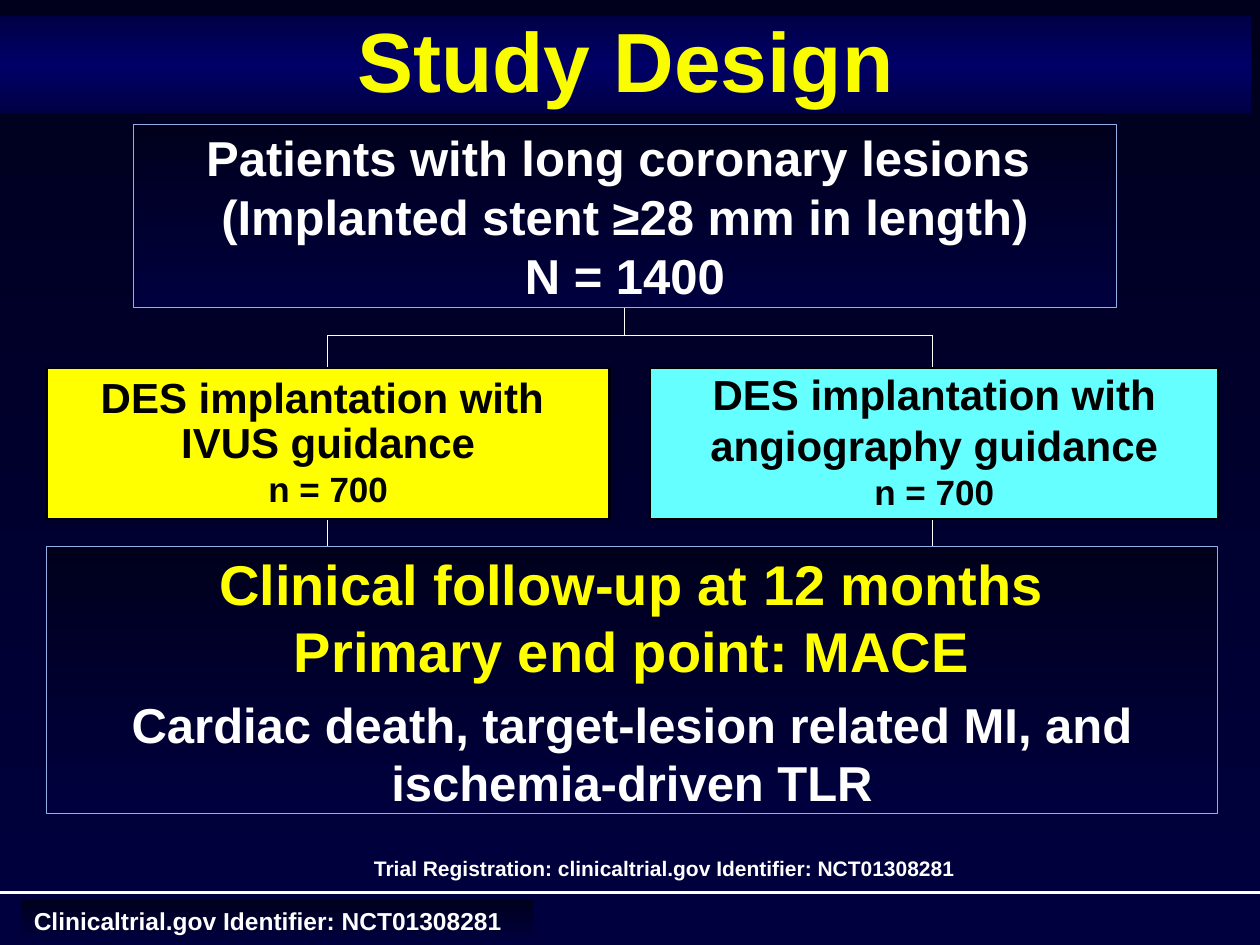
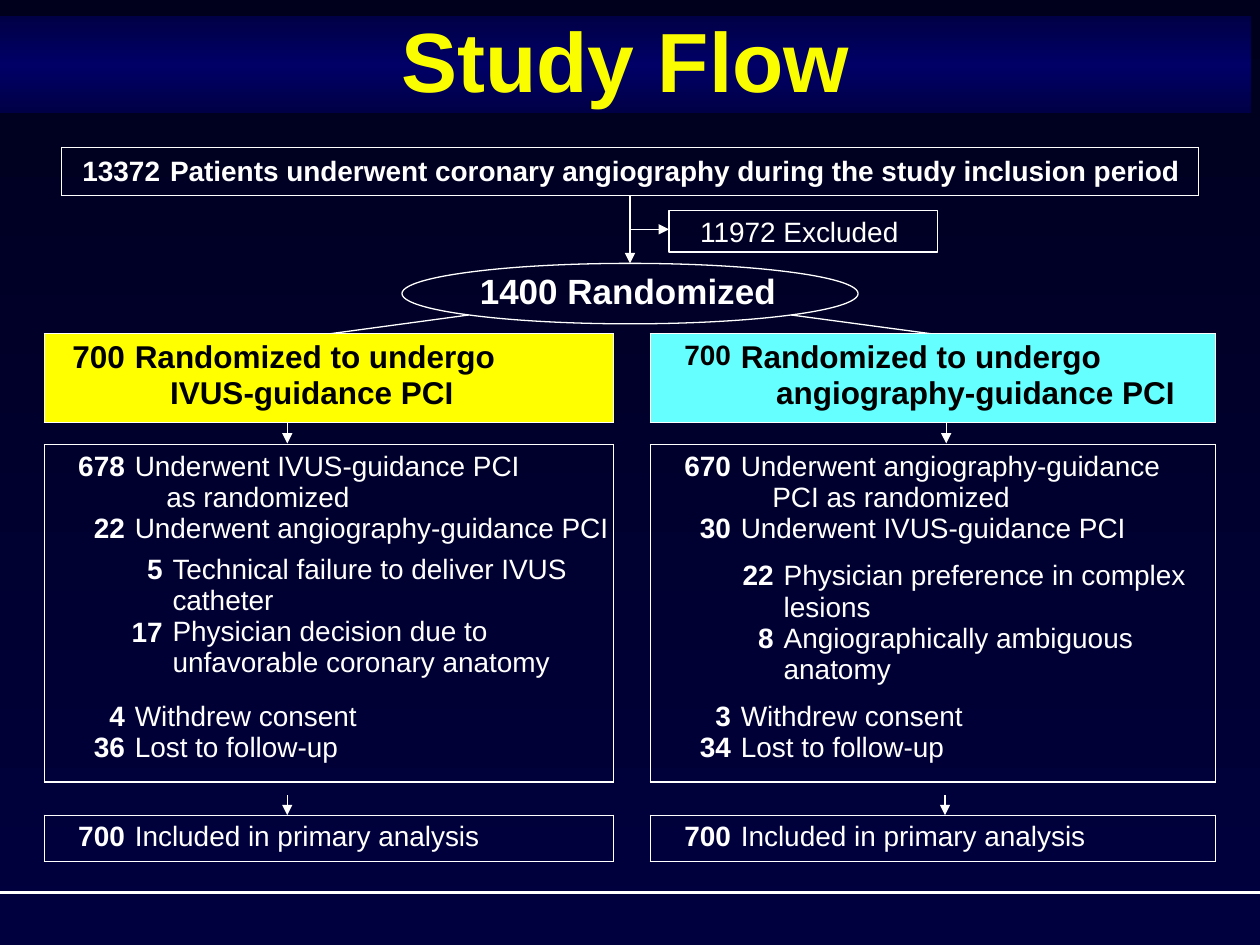
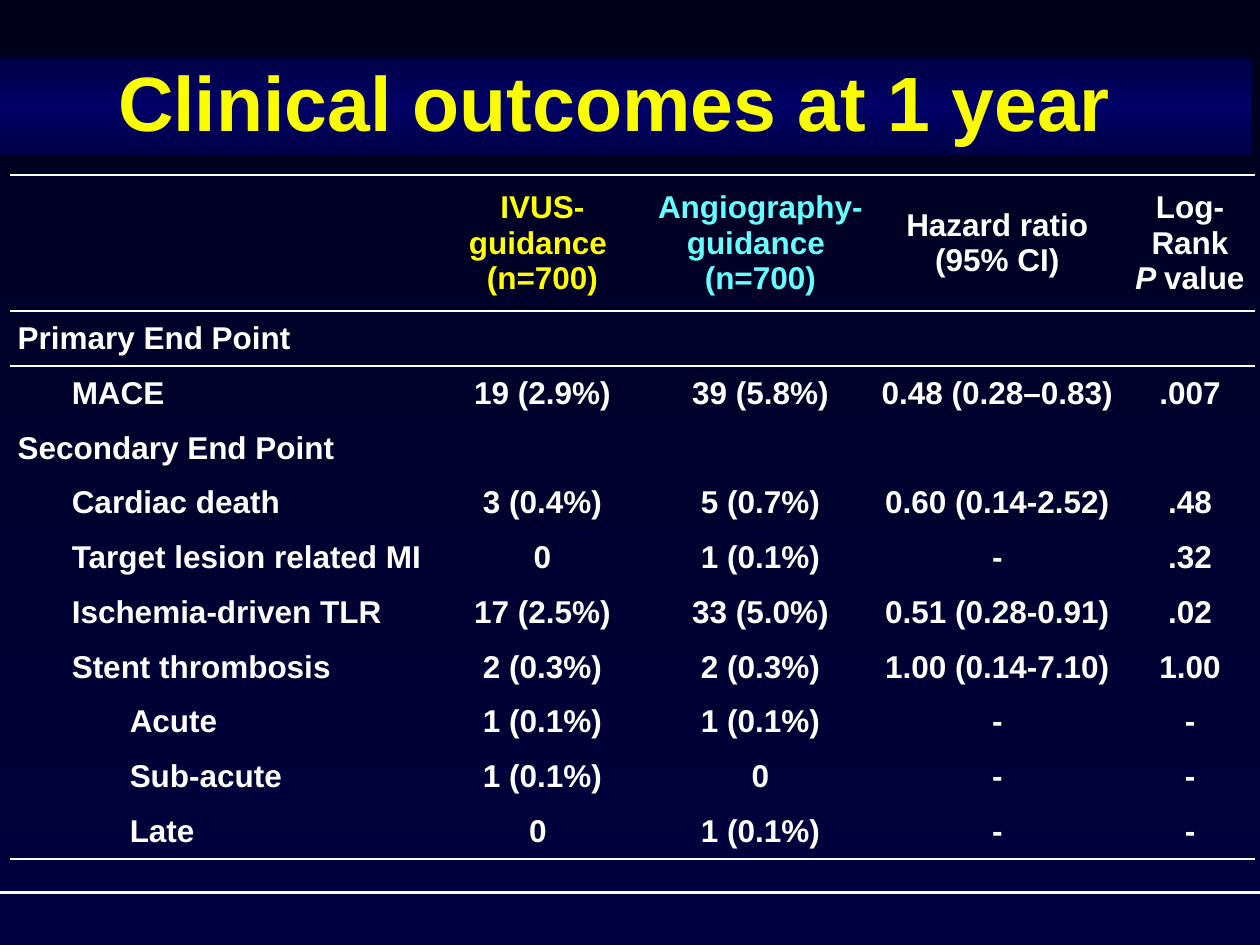
from copy import deepcopy

from lxml import etree
from pptx import Presentation
from pptx.dml.color import RGBColor
from pptx.enum import shapes, text
from pptx.oxml.ns import qn
from pptx.util import Inches, Pt

# ---- Shared look ----
WIDTH, HEIGHT = 10, 7.5
FONT = "Arial"
COLORS = dict(white="FFFFFF", black="000000", title="FAFD00", yellow="FFFF00",
              cyan="66FFFF", edge="92AFE6")
NIGHT = ["00001D", "00003E"]
BAND = ["000047", "000066", "000047"]
NO_GRID = "{2D5ABB26-0587-4C30-8999-92F81FD0307C}"
ALIGN = dict(l=text.PP_ALIGN.LEFT, c=text.PP_ALIGN.CENTER, r=text.PP_ALIGN.RIGHT)
MIDDLE, TOP = text.MSO_ANCHOR.MIDDLE, text.MSO_ANCHOR.TOP
LINE = 17.9  # height in points of one line of 16-point text

# ---- Study design: a paragraph is a string or (string, changes of style) ----
TIGHT = dict(spacing=0.9)
PATIENTS = ["Patients with long coronary lesions ",
            "(Implanted stent ≥28 mm in length)", "N = 1400"]
DESIGN_ARMS = [  # left, width, fill, paragraphs
    (0.37, 4.47, "yellow", [("DES implantation with ", TIGHT), ("IVUS guidance", TIGHT),
                            ("n = 700", dict(size=20))]),
    (5.16, 4.51, "cyan", [("DES implantation with", TIGHT), "angiography guidance",
                          ("n = 700", dict(size=20))]),
]
FOLLOW_UP = ["Clinical follow-up at 12 months",
             ("Primary end point: MACE", dict(after=6)),
             ("Cardiac death, target-lesion related MI, and ischemia-driven TLR",
              dict(size=28, color="white"))]
FOOTER = "Clinicaltrial.gov Identifier: NCT01308281"
REGISTRATION = "Trial Registration: clinicaltrial.gov Identifier: NCT01308281"

# ---- Study flow ----
SCREENED = ("13372", "Patients underwent coronary angiography during the study inclusion period")
FLOW_ARMS = [
    dict(left=0.35, width=4.52, fill="yellow", arrows=(2.28, 2.28), size=18,
         group=["Randomized to undergo", "IVUS-guidance PCI"],
         treated=["Underwent IVUS-guidance PCI", "as randomized",
                  "Underwent angiography-guidance PCI"],
         counts=["678", "22", "4", "36"],
         reasons=(0.96, 4.35, 0.37, 3.52), reason_counts=["5", "17"],
         reason_texts=["Technical failure to deliver IVUS catheter",
                       "Physician decision due to unfavorable coronary anatomy"]),
    dict(left=5.16, width=4.49, fill="cyan", arrows=(7.51, 7.5), size=16,
         group=["Randomized to undergo", "angiography-guidance PCI"],
         treated=["Underwent angiography-guidance", "PCI as randomized",
                  "Underwent IVUS-guidance PCI"],
         counts=["670", "30", "3", "34"],
         reasons=(5.8, 4.4, 0.38, 3.47), reason_counts=["22", "8"],
         reason_texts=["Physician preference in complex lesions",
                       "Angiographically ambiguous anatomy"]),
]

# ---- Clinical outcomes ----
OUTCOME_HEADS = [  # paragraphs, colour
    ([], "white"),
    (["IVUS-", "guidance ", "(n=700)"], "yellow"),
    (["Angiography- guidance ", "(n=700)"], "cyan"),
    (["Hazard ratio (95% CI)"], "white"),
    (["Log-Rank", "P value"], "white"),
]
OUTCOMES = [  # level, label, values
    (0, "Primary End Point", []),
    (1, "MACE", ["19 (2.9%)", "39 (5.8%)", "0.48 (0.28–0.83)", ".007"]),
    (0, "Secondary End Point", []),
    (1, "Cardiac death", ["3 (0.4%)", "5 (0.7%)", "0.60 (0.14-2.52)", ".48"]),
    (1, "Target lesion related MI", ["0", "1 (0.1%)", "-", ".32"]),
    (1, "Ischemia-driven TLR", ["17 (2.5%)", "33 (5.0%)", "0.51 (0.28-0.91)", ".02"]),
    (1, "Stent thrombosis", ["2 (0.3%)", "2 (0.3%)", "1.00 (0.14-7.10)", "1.00"]),
    (2, "Acute", ["1 (0.1%)", "1 (0.1%)", "-", "-"]),
    (2, "Sub-acute", ["1 (0.1%)", "0", "-", "-"]),
    (2, "Late", ["0 ", "1 (0.1%)", "-", "-"]),
]
OUTCOME_COLUMNS = [3.36, 1.73, 1.73, 2.03, 1.03]
LEVEL_INDENT = [0, 0.43, 0.89]


def rgb(name):
    return RGBColor.from_string(COLORS.get(name, name))


def gradient(fill, colors):
    """Fill from top to bottom with evenly spaced colours."""
    fill.gradient()
    fill.gradient_angle = 270
    stop_list = fill.gradient_stops[0]._gs.getparent()
    while len(stop_list) < len(colors):
        stop_list.append(deepcopy(stop_list[-1]))
    for i, (stop, color) in enumerate(zip(fill.gradient_stops, colors)):
        stop.position = i / (len(colors) - 1)
        stop.color.rgb = rgb(color)


def paint(fill, color):
    if color is None:
        fill.background()
    elif isinstance(color, list):
        gradient(fill, color)
    else:
        fill.solid()
        fill.fore_color.rgb = rgb(color)


def write(frame, paragraphs, **style):
    """Put paragraphs in a frame; each may change the common style."""
    for i, item in enumerate(paragraphs):
        words, changes = (item, {}) if isinstance(item, str) else item
        look = dict(size=16, color="white", bold=True, align="l", spacing=1,
                    before=0, after=0, indent=0) | style | changes
        para = frame.paragraphs[0] if i == 0 else frame.add_paragraph()
        para.text = words
        para.alignment = ALIGN[look["align"]]
        para.line_spacing = look["spacing"]
        para.space_before, para.space_after = Pt(look["before"]), Pt(look["after"])
        if look["indent"]:
            para._p.get_or_add_pPr().set("marL", str(Inches(look["indent"])))
        font = para.font
        font.name, font.size, font.bold = FONT, Pt(look["size"]), look["bold"]
        font.color.rgb = rgb(look["color"])


def add_box(page, place, paragraphs=(), fill=None, line=None, weight=0.75,
            kind=shapes.MSO_SHAPE.RECTANGLE, anchor=MIDDLE, wrap=True, **style):
    box = page.shapes.add_shape(kind, *map(Inches, place))
    box.shadow.inherit = False
    paint(box.fill, fill)
    paint(box.line.fill, line)
    if line:
        box.line.width = Pt(weight)
    box.text_frame.word_wrap = wrap
    box.text_frame.vertical_anchor = anchor
    write(box.text_frame, paragraphs, **style)
    return box


def add_line(page, start, end, weight=0.75, arrow=False):
    line = page.shapes.add_connector(shapes.MSO_CONNECTOR.STRAIGHT,
                                     *map(Inches, (*start, *end)))
    line.line.color.rgb = rgb("white")
    line.line.width = Pt(weight)
    if arrow:
        etree.SubElement(line.line._get_or_add_ln(), qn("a:tailEnd"), type="triangle")
    etree.SubElement(line._element.spPr, qn("a:effectLst"))
    return line


def add_grid(page, left, top, columns, rows):
    """Add a table without any style of its own."""
    frame = page.shapes.add_table(len(rows), len(columns), *map(
        Inches, (left, top, sum(columns), sum(rows))))
    grid = frame.table
    grid.first_row = grid.horz_banding = False
    grid._tbl.tblPr.find(qn("a:tableStyleId")).text = NO_GRID
    for column, width in zip(grid.columns, columns):
        column.width = Inches(width)
    for row, height in zip(grid.rows, rows):
        row.height = Inches(height)
    return grid


def fill_cell(cell, paragraphs, sides="", weight=0.75, fill=None, anchor=TOP,
              margins=(0.04, 0.05), **style):
    cell.margin_left = cell.margin_right = Inches(margins[0])
    cell.margin_top = cell.margin_bottom = Inches(margins[1])
    cell.vertical_anchor = anchor
    for side in "LRTB":
        if side in sides:
            edge = etree.SubElement(cell._tc.get_or_add_tcPr(), qn("a:ln" + side),
                                    w=str(Pt(weight)))
            solid = etree.SubElement(edge, qn("a:solidFill"))
            etree.SubElement(solid, qn("a:srgbClr"), val=COLORS["white"])
    paint(cell.fill, fill)
    write(cell.text_frame, paragraphs, **style)


def add_entry(page, place, columns, counts, labels, framed=True, count_style=None,
              label_style=None, **common):
    """Add a two-column table: counts on the left, what they count on the right."""
    left, top, height = place
    grid = add_grid(page, left, top, columns, [height])
    fill_cell(grid.cell(0, 0), counts, sides="LTB" if framed else "",
              **common, align="r", **(count_style or {}))
    fill_cell(grid.cell(0, 1), labels, sides="RTB" if framed else "",
              **common, **(label_style or {}))


def add_page(deck, title, top=0.13, size=48):
    page = deck.slides.add_slide(deck.slide_layouts[5])
    band = page.shapes.title
    band.left, band.top, band.width, band.height = map(Inches, (0, top, 9.93, 0.77))
    gradient(band.fill, BAND)
    frame = band.text_frame
    frame.auto_size = text.MSO_AUTO_SIZE.NONE
    frame.word_wrap = True
    frame.vertical_anchor = MIDDLE
    write(frame, [title], size=size, color="title", align="c", spacing=0.9)
    return page


def set_master(deck, page):
    """Give every slide the night background and the rule above the footer."""
    master = deck.slide_master
    gradient(master.background.fill, NIGHT)
    rule = add_line(page, (0, 7.08), (WIDTH, 7.08), 1.75)
    master.shapes._spTree.append(rule._element)


def draw_design(page):
    # Tree of connecting lines, behind the boxes
    fork, branches = 2.66, (2.6, 7.4)
    add_line(page, (branches[0], fork), (branches[1], fork), 0.5)
    add_line(page, (4.96, 2.1), (4.96, fork), 0.5)
    for x in branches:
        add_line(page, (x, fork), (x, 4.38), 0.5)
    # Boxes
    for left, width, fill, paragraphs in DESIGN_ARMS:
        add_box(page, (left, 2.92, width, 1.2), paragraphs, fill, "black", 1.5,
                size=24, color="black", align="c")
    add_box(page, (1.06, 0.99, 7.8, 1.45), PATIENTS, NIGHT, "edge", 0.5,
            size=28, align="c")
    add_box(page, (0.37, 4.34, 9.29, 2.12), FOLLOW_UP, NIGHT, "edge", 0.5,
            size=32, color="yellow", align="c")
    # Registration notes
    add_box(page, (0.17, 7.14, 4.06, 0.34), [FOOTER], NIGHT, anchor=TOP, size=14)
    note = page.shapes.add_textbox(*map(Inches, (2.87, 6.74, 4.94, 0.3)))
    note.text_frame.word_wrap = True
    write(note.text_frame, [REGISTRATION], size=12)


def draw_flow(page):
    # Screening and randomization
    add_entry(page, (0.49, 1.17, 0.38), [0.82, 8.2], [SCREENED[0]], [SCREENED[1]],
              anchor=MIDDLE)
    add_line(page, (5, 1.55), (5, 2.09), arrow=True)
    add_line(page, (5, 1.82), (5.31, 1.82), arrow=True)
    add_box(page, (5.31, 1.67, 2.13, 0.33), ["11972 Excluded "], line="white",
            bold=False, align="c")
    add_box(page, (3.19, 2.09, 3.62, 0.48), line="white", kind=shapes.MSO_SHAPE.OVAL)
    label = page.shapes.add_textbox(*map(Inches, (3.71, 2.09, 2.57, 0.44)))
    label.text_frame.word_wrap = False
    write(label.text_frame, ["1400 Randomized"], size=20)
    for start, end in ((3.72, 2.61), (6.28, 7.4)):
        add_line(page, (start, 2.5), (end, 2.65))

    # One column of tables for each arm
    plain = dict(bold=False)
    for arm in FLOW_ARMS:
        left, columns = arm["left"], [0.68, arm["width"] - 0.68]
        first, second = arm["group"]
        add_entry(page, (left, 2.65, 0.66), columns, ["700"],
                  [first, (second, dict(indent=0.28))], fill=arm["fill"], color="black",
                  count_style=dict(size=arm["size"]), label_style=dict(size=18))
        treated, how, crossed = arm["treated"]
        own, other, withdrew, lost = arm["counts"]
        after_reasons = dict(before=5 * LINE)
        add_entry(page, (left, 3.53, 2.66), columns,
                  [own, (other, dict(before=LINE)), (withdrew, after_reasons), lost],
                  [treated, (how, dict(indent=0.25)), crossed,
                   ("Withdrew consent", after_reasons), "Lost to follow-up"],
                  label_style=plain)
        x, y, count_width, label_width = arm["reasons"]
        one, two = arm["reason_counts"]
        add_entry(page, (x, y, 1.17), [count_width, label_width],
                  [one, (two, dict(before=LINE))], arm["reason_texts"],
                  framed=False, label_style=plain)
        add_entry(page, (left, 6.47, 0.35), columns, ["700"],
                  ["Included in primary analysis"], label_style=plain)
        for x, y in zip(arm["arrows"], (3.36, 6.31)):
            add_line(page, (x, y), (x, y + 0.16), arrow=True)


def draw_outcomes(page):
    head_height = 1.08
    row_height = (5.43 - head_height) / len(OUTCOMES)
    grid = add_grid(page, 0.08, 1.39, OUTCOME_COLUMNS,
                    [head_height] + [row_height] * len(OUTCOMES))
    margins = [(0.06, 0), (0, 0), (0, 0), (0.06, 0), (0.06, 0)]
    common = dict(weight=1, anchor=MIDDLE, size=18)
    for c, (paragraphs, color) in enumerate(OUTCOME_HEADS):
        fill_cell(grid.cell(0, c), paragraphs, "TB", margins=margins[c],
                  color=color, align="c", **common)
    # Only the P of the last heading is italic
    heading = grid.cell(0, 4).text_frame.paragraphs[1]
    heading.runs[0].text = "P "
    heading.runs[0].font.italic = True
    heading.add_run().text = "value"

    for r, (level, label, values) in enumerate(OUTCOMES, 1):
        sides = {1: "T", len(OUTCOMES): "B"}.get(r, "")
        cells = [label] + (values or [None] * 4)
        for c, value in enumerate(cells):
            fill_cell(grid.cell(r, c), [value] if value else [], sides,
                      margins=margins[c], align="c" if c else "l",
                      indent=0 if c else LEVEL_INDENT[level], **common)


def main():
    deck = Presentation()
    deck.slide_width, deck.slide_height = Inches(WIDTH), Inches(HEIGHT)
    design = add_page(deck, "Study Design")
    set_master(deck, design)
    draw_design(design)
    draw_flow(add_page(deck, "Study Flow"))
    draw_outcomes(add_page(deck, "Clinical outcomes at 1 year ", top=0.46, size=44))
    deck.save("out.pptx")


if __name__ == "__main__":
    main()
